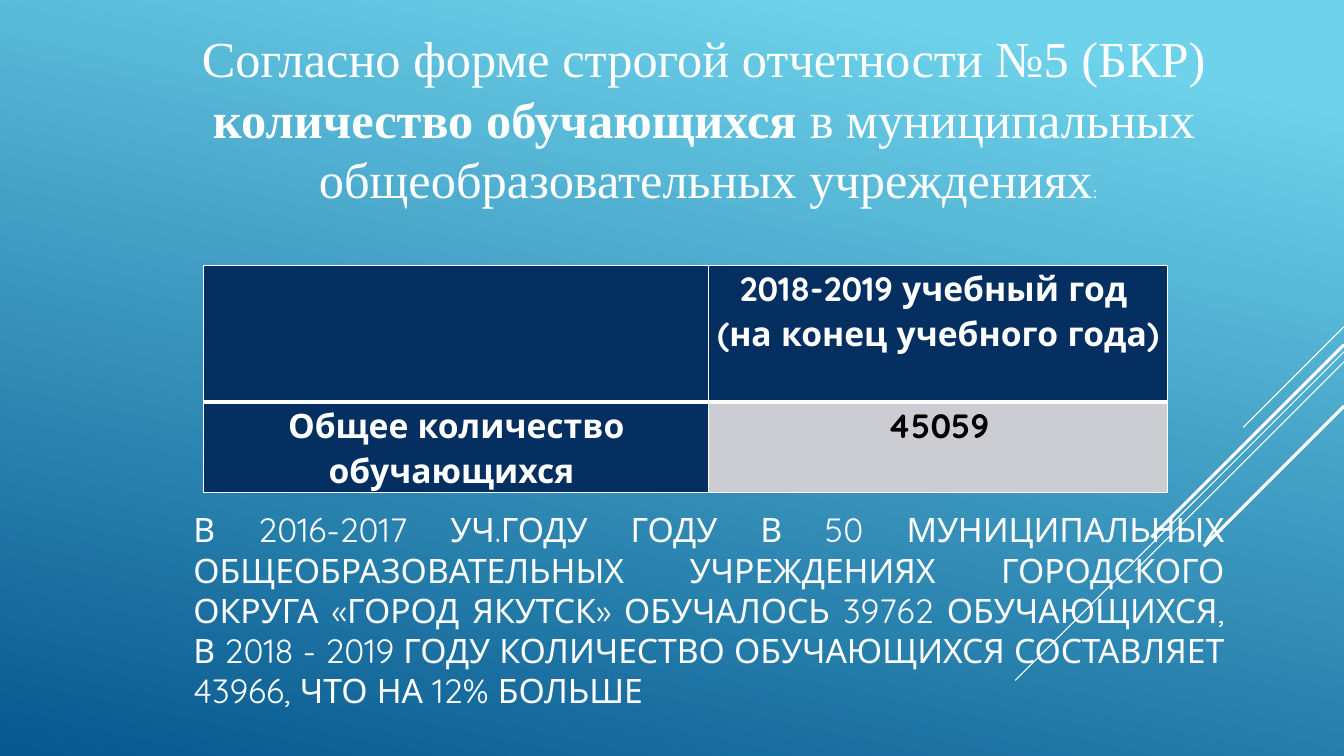
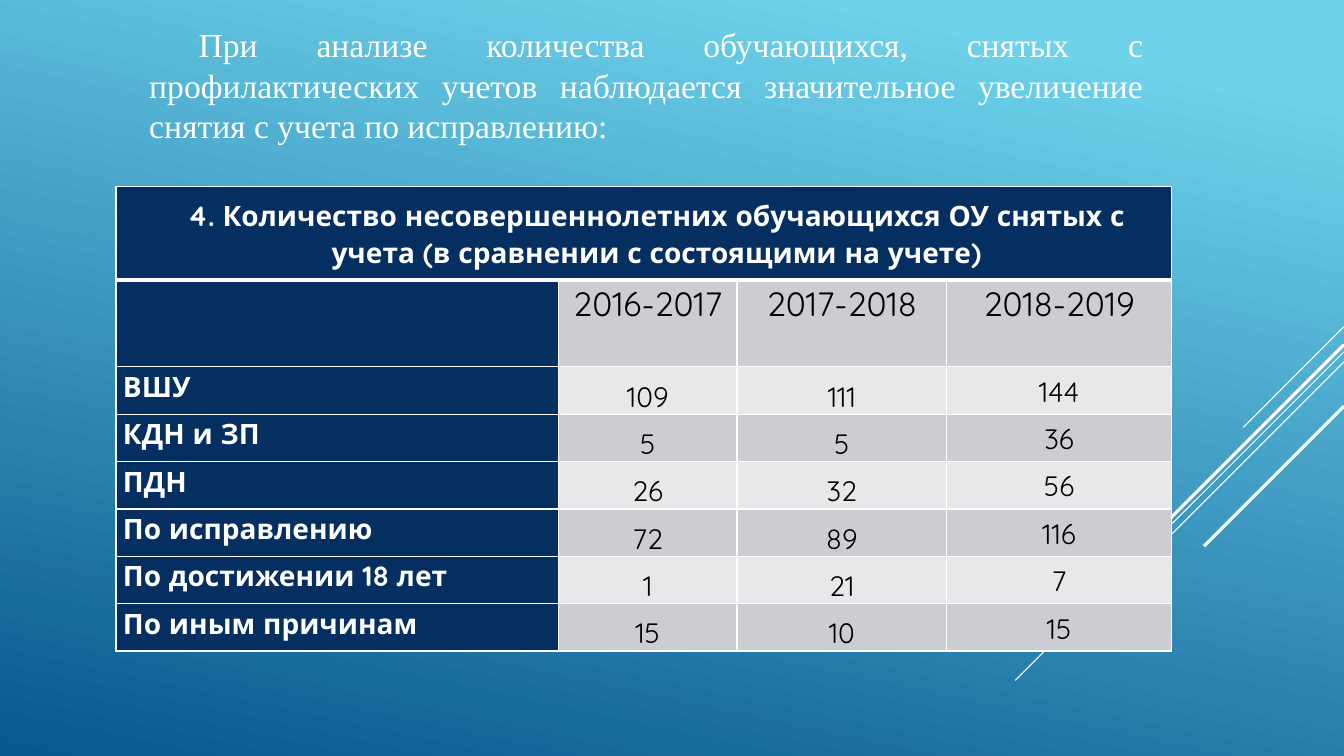
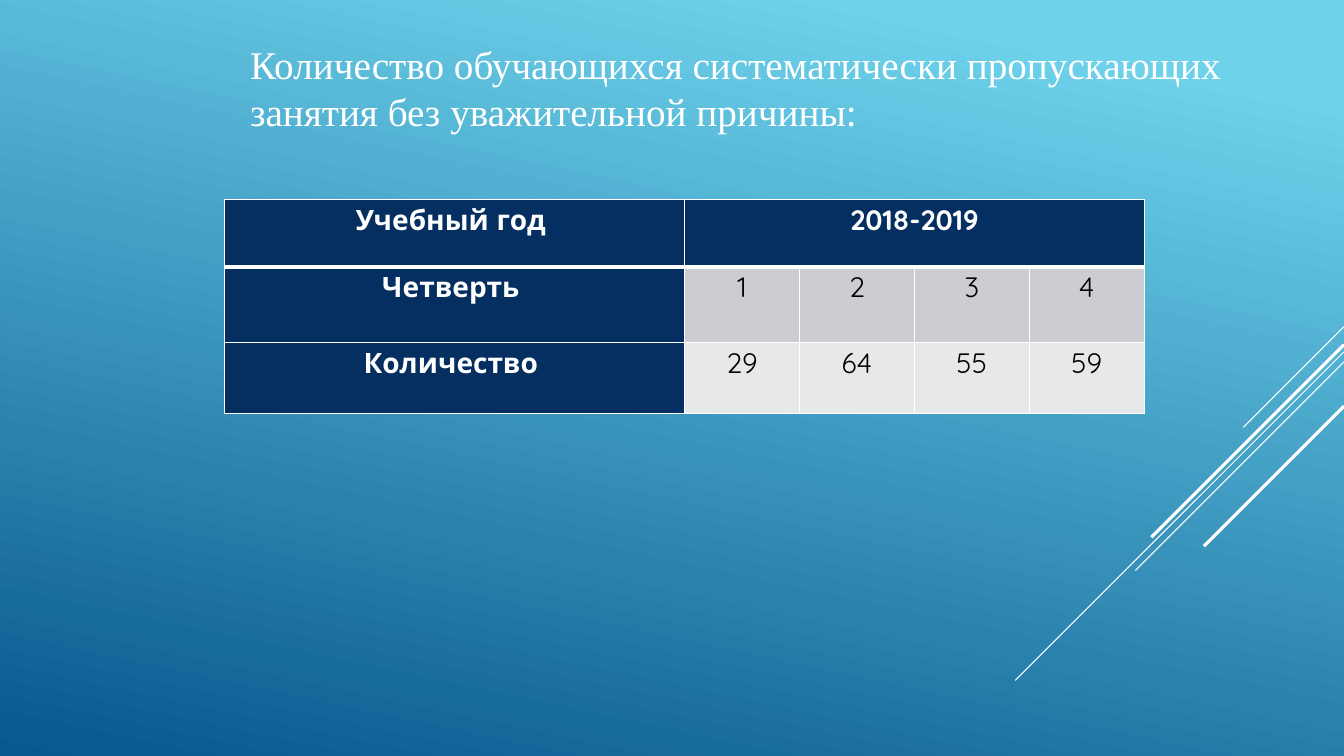
from lxml.etree import SubElement
from pptx import Presentation
from pptx.dml.color import RGBColor
from pptx.enum.shapes import MSO_CONNECTOR
from pptx.enum.text import MSO_ANCHOR, MSO_AUTO_SIZE, PP_ALIGN
from pptx.oxml.ns import qn
from pptx.util import Inches, Pt

# Shared look
WHITE, BLACK, NAVY = "FFFFFF", "000000", "052F61"
BANDS = ("CCCDD2", "E7E8EA")
SKY = ((0.1, "6ED2EB"), (1.0, "06588E"))
TITLE_FONT, BODY_FONT = "Times New Roman", "Quicksand"
LINE_RATIO = 1.2
FIRST_LINE_INDENT = 0.49
SLIDE_WIDTH, SLIDE_HEIGHT = 13.33, 7.5
TITLE_ONLY = 5
# Each ray runs from the right edge down-left at 45 degrees: top, length, weight
RAYS = ((3.24, 1.0, 0.75), (3.49, 3.26, 0.75), (3.59, 2.07, 0.75),
        (3.42, 1.91, 2.25), (4.03, 1.39, 2.25))


def color(hex_string):
    return RGBColor.from_string(hex_string)


def apply_format(target, values):
    for name, value in values.items():
        setattr(target, name, value)


def add_run(paragraph, text, font_name, size, hex_color, bold=False):
    run = paragraph.add_run()
    run.text = text
    apply_format(run.font, {"name": font_name, "size": Pt(size), "bold": bold})
    run.font.color.rgb = color(hex_color)


# Background and diagonal rays, held by the master and the layout
def decorate(presentation, layout, slide):
    fill = presentation.slide_master.background.fill
    fill.gradient()
    fill.gradient_angle = 258
    for stop, (position, hex_color) in zip(fill.gradient_stops, SKY):
        stop.position = position
        stop.color.rgb = color(hex_color)

    for number, (top, length, weight) in enumerate(RAYS):
        ray = slide.shapes.add_connector(
            MSO_CONNECTOR.STRAIGHT, Inches(SLIDE_WIDTH), Inches(top),
            Inches(SLIDE_WIDTH - length), Inches(top + length))
        ray.line.color.rgb = color(WHITE)
        ray.line.width = Pt(weight)
        SubElement(ray.element.spPr, qn("a:effectLst"))
        ray.element.nvCxnSpPr.cNvPr.set("id", str(101 + number))
        layout.shapes.element.insert(2 + number, ray.element)


# Paragraphs of (text, size, bold) runs in a box
def fill_text(shape, box, paragraphs, font_name, alignment, anchor, indent=0):
    places = map(Inches, box)
    apply_format(shape, dict(zip(("left", "top", "width", "height"), places)))
    frame = shape.text_frame
    apply_format(frame, {"word_wrap": True, "auto_size": MSO_AUTO_SIZE.NONE,
                         "vertical_anchor": anchor})
    for index, runs in enumerate(paragraphs):
        paragraph = frame.paragraphs[0] if index == 0 else frame.add_paragraph()
        apply_format(paragraph, {
            "alignment": alignment, "space_before": Pt(0),
            "line_spacing": Pt(round(runs[0][1] * LINE_RATIO, 1))})
        paragraph._p.get_or_add_pPr().set("indent", str(Inches(indent)))
        for text, size, bold in runs:
            add_run(paragraph, text, font_name, size, WHITE, bold)


def add_title(slide, box, paragraphs, alignment):
    fill_text(slide.shapes.title, box, paragraphs, TITLE_FONT, alignment,
              MSO_ANCHOR.TOP, FIRST_LINE_INDENT)


def add_body(slide, box, text, size):
    shape = slide.shapes.add_textbox(*map(Inches, box))
    fill_text(shape, box, [[(text, size, False)]], BODY_FONT,
              PP_ALIGN.JUSTIFY, MSO_ANCHOR.MIDDLE)


# Table parts
def set_borders(cell, **weights):
    properties = cell._tc.get_or_add_tcPr()
    for side in "LRTB":
        line = SubElement(properties, qn(f"a:ln{side}"),
                          w=str(Pt(weights.get(side, 1))))
        solid = SubElement(line, qn("a:solidFill"))
        SubElement(solid, qn("a:srgbClr"), val=WHITE)


def fill_cell(cell, text, size, fill, font_color, bold, alignment, anchor):
    cell.fill.solid()
    cell.fill.fore_color.rgb = color(fill)
    apply_format(cell, {
        "margin_left": Inches(0.07), "margin_right": Inches(0.07),
        "margin_top": 0, "margin_bottom": 0, "vertical_anchor": anchor})
    for index, line in enumerate(text.split("\n") if text else ()):
        frame = cell.text_frame
        paragraph = frame.paragraphs[0] if index == 0 else frame.add_paragraph()
        apply_format(paragraph, {"alignment": alignment, "line_spacing": 1.07})
        add_run(paragraph, line, BODY_FONT, size, font_color, bold)


def add_data_table(slide, left, top, columns, heights, rows, size,
                   label_alignment=PP_ALIGN.CENTER, value_bold=False,
                   value_anchors=None, merge_from=None, row_sizes=None):
    """Navy header row and label column, banded values."""
    table = slide.shapes.add_table(
        len(rows), len(columns), Inches(left), Inches(top),
        Inches(sum(columns)), Inches(sum(heights))).table
    apply_format(table, {"first_row": False, "horz_banding": False})
    for column, width in zip(table.columns, columns):
        column.width = Inches(width)
    for row, height in zip(table.rows, heights):
        row.height = Inches(height)
    if merge_from is not None:
        table.cell(0, merge_from).merge(table.cell(0, len(columns) - 1))

    for r, texts in enumerate(rows):
        for c in range(len(columns)):
            cell = table.cell(r, c)
            set_borders(cell, B=3 if r == 0 else 1, T=3 if r == 1 else 1)
            is_label = r == 0 or c == 0
            is_value_row = r > 1 and c > 0
            fill_cell(
                cell, texts[c] if c < len(texts) else "",
                (row_sizes or {}).get(r, size),
                NAVY if is_label else BANDS[(r - 1) % 2],
                WHITE if is_label else BLACK, is_label or value_bold,
                label_alignment if r > 0 and c == 0 else PP_ALIGN.CENTER,
                value_anchors[c - 1] if value_anchors and is_value_row
                else MSO_ANCHOR.TOP)
    return table


# Slides
def build_total_slide(slide):
    add_title(slide, (1.36, 0.22, 10.88, 1.92), [
        [("Согласно форме строгой отчетности №5 (БКР) ", 36, False)],
        [("количество обучающихся", 36, True),
         (" в муниципальных ", 36, False)],
        [("общеобразовательных учреждениях", 36, False), (": ", 12, False)],
    ], PP_ALIGN.CENTER)
    add_data_table(
        slide, 2.02, 2.63, (5.01, 4.55), (1.36, 0.9),
        [("", "2018-2019 учебный год \n(на конец учебного года)"),
         ("Общее количество обучающихся ", "45059")],
        24, value_bold=True)
    add_body(slide, (1.82, 5.49, 10.42, 1.12),
             "В 2016-2017 УЧ.ГОДУ ГОДУ В 50 МУНИЦИПАЛЬНЫХ "
             "ОБЩЕОБРАЗОВАТЕЛЬНЫХ УЧРЕЖДЕНИЯХ ГОРОДСКОГО ОКРУГА "
             "«ГОРОД ЯКУТСК» ОБУЧАЛОСЬ 39762 ОБУЧАЮЩИХСЯ, В 2018 - 2019 "
             "ГОДУ КОЛИЧЕСТВО ОБУЧАЮЩИХСЯ СОСТАВЛЯЕТ 43966, "
             "ЧТО НА 12% БОЛЬШЕ", 24)


def build_removed_slide(slide):
    add_title(slide, (1.38, 0.19, 10.06, 1.62), [
        [("При анализе количества обучающихся, снятых с профилактических "
          "учетов наблюдается значительное увеличение снятия с учета "
          "по исправлению:", 24, False)],
    ], PP_ALIGN.JUSTIFY)
    table = add_data_table(
        slide, 1.15, 1.85, (4.39, 1.77, 2.08, 2.23),
        (0.93, 0.86) + (0.47,) * 6,
        [("4. Количество несовершеннолетних обучающихся ОУ снятых с учета "
          "(в сравнении с состоящими на учете)",),
         ("", "2016-2017", "2017-2018", "2018-2019"),
         ("ВШУ", "109", "111", "144"),
         ("КДН и ЗП", "5", "5", "36"),
         ("ПДН", "26", "32", "56"),
         ("По исправлению", "72", "89", "116"),
         ("По достижении 18 лет", "1", "21", "7"),
         ("По иным причинам", "15", "10", "15")],
        20, label_alignment=PP_ALIGN.JUSTIFY, merge_from=0, row_sizes={1: 24},
        value_anchors=(MSO_ANCHOR.BOTTOM, MSO_ANCHOR.BOTTOM, MSO_ANCHOR.MIDDLE))
    heading = table.cell(0, 0)
    heading.vertical_anchor = MSO_ANCHOR.MIDDLE
    properties = heading.text_frame.paragraphs[0]._p.get_or_add_pPr()
    properties.set("marL", str(Inches(0.25)))


def build_absence_slide(slide):
    add_title(slide, (1.89, 0.35, 10.52, 1.45), [
        [("Количество обучающихся систематически пропускающих", 28, False)],
        [("занятия без уважительной причины:", 28, False)],
    ], PP_ALIGN.LEFT)
    add_data_table(
        slide, 2.23, 1.98, (4.56,) + (1.14,) * 4, (0.67, 0.75, 0.7),
        [("Учебный год ", "2018-2019"),
         ("Четверть ", "1", "2", "3", "4"),
         ("Количество ", "29", "64", "55", "59")],
        20, merge_from=1)


def main():
    presentation = Presentation()
    apply_format(presentation, {"slide_width": Inches(SLIDE_WIDTH),
                                "slide_height": Inches(SLIDE_HEIGHT)})
    layout = presentation.slide_layouts[TITLE_ONLY]
    builders = (build_total_slide, build_removed_slide, build_absence_slide)
    for index, build in enumerate(builders):
        slide = presentation.slides.add_slide(layout)
        if index == 0:
            decorate(presentation, layout, slide)
        build(slide)
    presentation.save("out.pptx")


if __name__ == "__main__":
    main()
